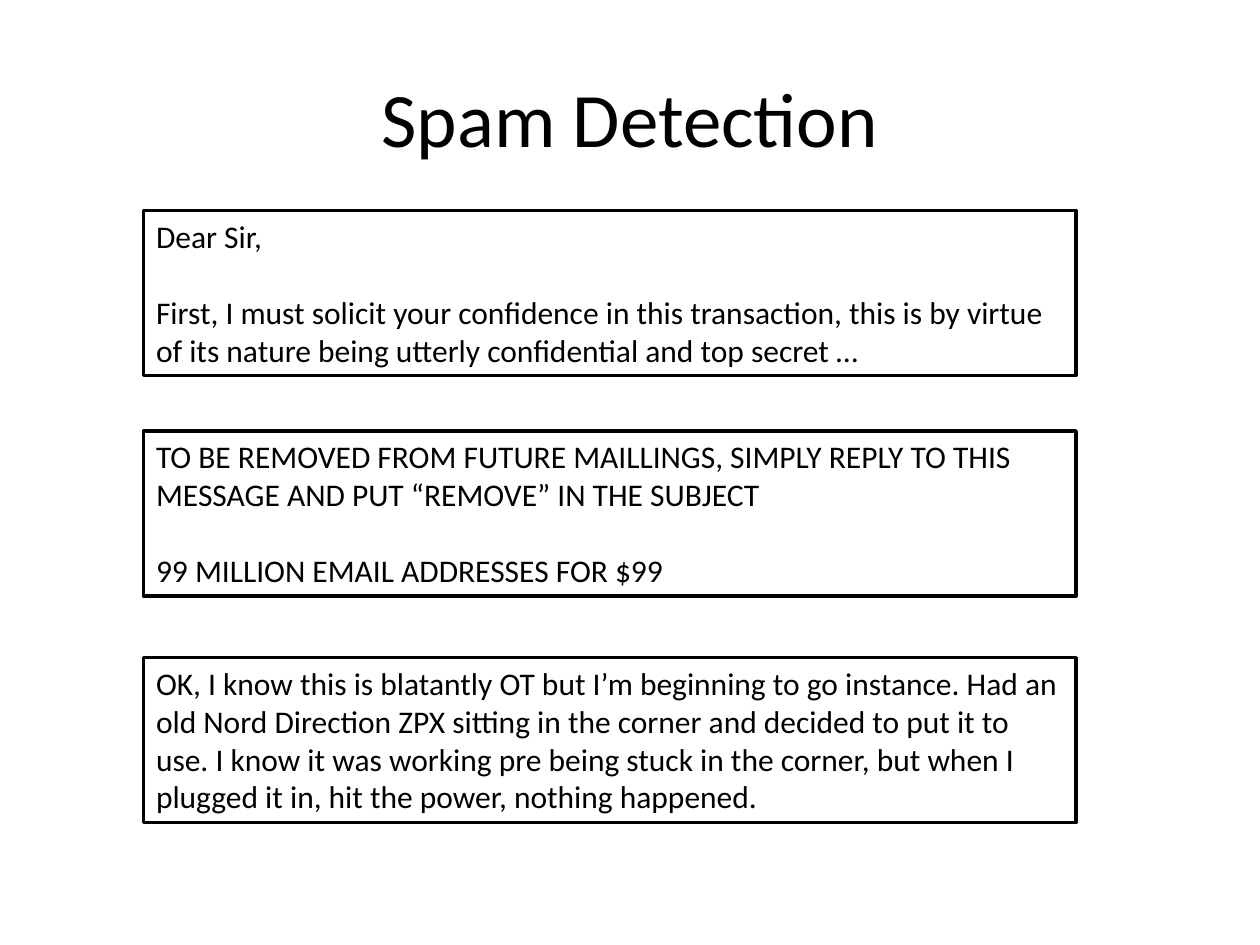
from dataclasses import dataclass

from pptx import Presentation
from pptx.dml.color import RGBColor
from pptx.enum.shapes import MSO_SHAPE
from pptx.enum.text import MSO_ANCHOR, MSO_AUTO_SIZE, PP_ALIGN
from pptx.slide import Slide
from pptx.text.text import _Paragraph as Paragraph
from pptx.util import Inches, Pt


@dataclass(frozen=True)
class Theme:
    font: str = "Calibri"
    ink: RGBColor = RGBColor(0, 0, 0)
    paper: RGBColor = RGBColor(255, 255, 255)
    title_size: Pt = Pt(44)
    body_size: Pt = Pt(18)
    paragraph_gap: Pt = Pt(22)
    border: Pt = Pt(2)


@dataclass(frozen=True)
class Message:
    top: float
    paragraphs: tuple[str, ...]


THEME = Theme()
MESSAGE_LEFT, MESSAGE_WIDTH, MESSAGE_HEIGHT = 1.14, 7.4, 1.31
MESSAGES = (
    Message(1.67, (
        "Dear Sir,",
        "First, I must solicit your confidence in this transaction, this is by "
        "virtue of its nature being utterly confidential and top secret …",
    )),
    Message(3.42, (
        "TO BE REMOVED FROM FUTURE MAILLINGS, SIMPLY REPLY TO THIS MESSAGE "
        "AND PUT “REMOVE” IN THE SUBJECT",
        "99 MILLION EMAIL ADDRESSES FOR $99",
    )),
    Message(5.22, (
        "OK, I know this is blatantly OT but I’m beginning to go instance. "
        "Had an old Nord Direction ZPX sitting in the corner and decided to "
        "put it to use. I know it was working pre being stuck in the corner, "
        "but when I plugged it in, hit the power, nothing happened.",
    )),
)


def add_run(paragraph: Paragraph, text: str, size: Pt) -> None:
    run = paragraph.add_run()
    run.text = text
    run.font.name = THEME.font
    run.font.size = size
    run.font.color.rgb = THEME.ink


def add_title(slide: Slide, text: str) -> None:
    box = slide.shapes.add_textbox(Inches(0.5), Inches(0.3), Inches(9), Inches(1.25))
    frame = box.text_frame
    frame.word_wrap = True
    frame.vertical_anchor = MSO_ANCHOR.MIDDLE
    paragraph = frame.paragraphs[0]
    paragraph.alignment = PP_ALIGN.CENTER
    add_run(paragraph, text, THEME.title_size)


def add_message(slide: Slide, message: Message) -> None:
    box = slide.shapes.add_shape(
        MSO_SHAPE.RECTANGLE, Inches(MESSAGE_LEFT), Inches(message.top),
        Inches(MESSAGE_WIDTH), Inches(MESSAGE_HEIGHT),
    )
    box.shadow.inherit = False
    box.fill.solid()
    box.fill.fore_color.rgb = THEME.paper
    box.line.color.rgb = THEME.ink
    box.line.width = THEME.border

    frame = box.text_frame
    frame.word_wrap = True
    frame.auto_size = MSO_AUTO_SIZE.SHAPE_TO_FIT_TEXT
    frame.vertical_anchor = MSO_ANCHOR.TOP
    for index, text in enumerate(message.paragraphs):
        paragraph = frame.add_paragraph() if index else frame.paragraphs[0]
        paragraph.alignment = PP_ALIGN.LEFT
        if index:
            paragraph.space_before = THEME.paragraph_gap
        add_run(paragraph, text, THEME.body_size)


def main() -> None:
    presentation = Presentation()
    presentation.slide_width = Inches(10)
    presentation.slide_height = Inches(7.5)
    slide = presentation.slides.add_slide(presentation.slide_layouts[6])
    add_title(slide, "Spam Detection")
    for message in MESSAGES:
        add_message(slide, message)
    presentation.save("out.pptx")


if __name__ == "__main__":
    main()
